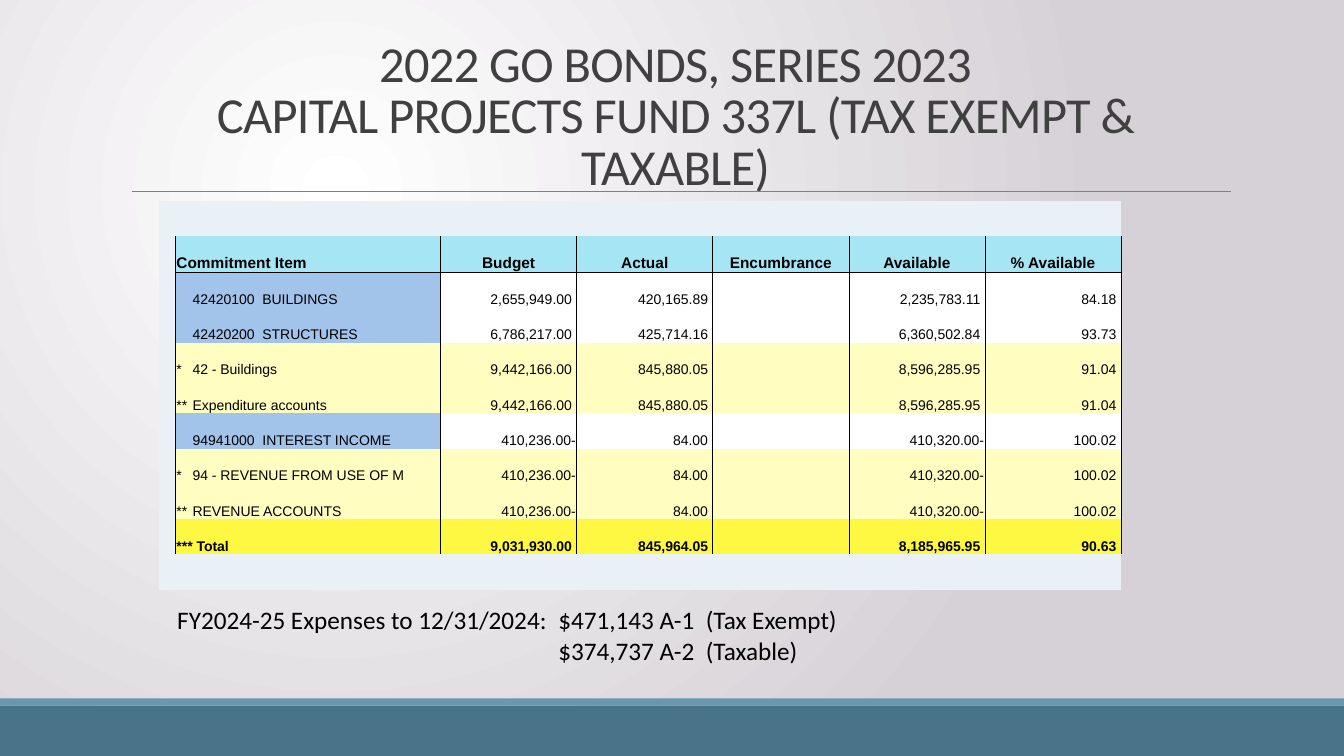
from pptx import Presentation, oxml
from pptx.dml.color import RGBColor
from pptx.enum import shapes, text
from pptx.oxml import ns
from pptx.util import Inches, Pt

BLACK, MARGIN_BLUE, HEADER_BLUE = "000000", "EAF1F6", "A6E5F4"
ITEM_BLUE, WHITE, PALE_YELLOW, YELLOW = "A2C3EA", "FFFFFF", "FFFDBF", "FFF843"
LEVEL_FILLS = {
    "item": (ITEM_BLUE, WHITE),
    "subtotal": (PALE_YELLOW, PALE_YELLOW),
    "total": (YELLOW, YELLOW),
}
HEADINGS = ["Commitment Item", "Budget", "Actual", "Encumbrance", "Available", "% Available"]
ACCOUNTS = [
    ("item", "42420100  BUILDINGS", "2,655,949.00 ", "420,165.89 ", "", "2,235,783.11 ", "84.18 "),
    ("item", "42420200  STRUCTURES", "6,786,217.00 ", "425,714.16 ", "", "6,360,502.84 ", "93.73 "),
    ("subtotal", "*\t42 - Buildings", "9,442,166.00 ", "845,880.05 ", "", "8,596,285.95 ", "91.04 "),
    ("subtotal", "**\tExpenditure accounts", "9,442,166.00 ", "845,880.05 ", "", "8,596,285.95 ", "91.04 "),
    ("item", "94941000  INTEREST INCOME", "410,236.00-", "84.00 ", "", "410,320.00-", "100.02 "),
    ("subtotal", "*\t94 - REVENUE FROM USE OF M", "410,236.00-", "84.00 ", "", "410,320.00-", "100.02 "),
    ("subtotal", "**\tREVENUE ACCOUNTS", "410,236.00-", "84.00 ", "", "410,320.00-", "100.02 "),
    ("total", "*** Total", "9,031,930.00 ", "845,964.05 ", "", "8,185,965.95 ", "90.63 "),
]


def colour(value):
    return RGBColor.from_string(value)


def add_span(para, wording, size, font, ink=BLACK, bold=False):
    span = para.add_run()
    span.text = wording
    span.font.size, span.font.name, span.font.bold = Pt(size), font, bold
    span.font.color.rgb = colour(ink)
    return span


def indent(para, left, first=0):
    properties = para._p.get_or_add_pPr()
    properties.set("marL", str(Inches(left)))
    properties.set("indent", str(Inches(first)))


def add_background(page):
    page.background.fill.solid()
    solid = page._element.find(".//" + ns.qn("p:bgPr"))[0]
    gradient = oxml.parse_xml(
        f'<a:gradFill {ns.nsdecls("a")} rotWithShape="1"><a:gsLst>'
        '<a:gs pos="0"><a:srgbClr val="FFFFFF"/></a:gs>'
        '<a:gs pos="100000"><a:srgbClr val="D6D1D6"/></a:gs></a:gsLst>'
        '<a:path path="circle"><a:fillToRect l="50000" t="50000" r="100000" b="100000"/>'
        '</a:path></a:gradFill>')
    solid.getparent().replace(solid, gradient)


def add_band(page, top, height, fill):
    band = page.shapes.add_shape(
        shapes.MSO_SHAPE.RECTANGLE, 0, Inches(top), Inches(13.33), Inches(height))
    band.shadow.inherit = False
    band.fill.solid()
    band.fill.fore_color.rgb = colour(fill)
    band.line.fill.background()


def add_rule(page, left, right, top):
    rule = page.shapes.add_connector(
        shapes.MSO_CONNECTOR.STRAIGHT, Inches(left), Inches(top), Inches(right), Inches(top))
    rule.line.color.rgb = colour("808080")
    rule.line.width = Pt(0.5)
    rule._element.spPr.append(oxml.parse_xml(f'<a:effectLst {ns.nsdecls("a")}/>'))


def add_title(page, lines):
    title = page.shapes.title
    title.left, title.top, title.width, title.height = map(Inches, (1.2, 0.23, 11, 1.76))
    frame = title.text_frame
    frame.word_wrap = True
    frame.auto_size = text.MSO_AUTO_SIZE.NONE
    frame.vertical_anchor = text.MSO_ANCHOR.BOTTOM
    para = frame.paragraphs[0]
    para.alignment, para.line_spacing = text.PP_ALIGN.CENTER, 0.85
    for number, line in enumerate(lines):
        if number:
            para.add_line_break()
        span = add_span(para, line, 36, "Calibri", "404040")
        span.font._element.set("spc", "-50")


def style_cell(cell, fill, sides=""):
    """Fill a cell and draw black borders on the given sides (L, R, T, B)."""
    cell.margin_left = cell.margin_right = cell.margin_top = Inches(0.01)
    cell.margin_bottom = 0
    cell.vertical_anchor = text.MSO_ANCHOR.BOTTOM
    properties = cell._tc.get_or_add_tcPr()
    for side in "LRTB":
        paint = '<a:solidFill><a:srgbClr val="000000"/></a:solidFill>' if side in sides else "<a:noFill/>"
        properties.append(oxml.parse_xml(
            f'<a:ln{side} {ns.nsdecls("a")} w="6350">{paint}</a:ln{side}>'))
    cell.fill.solid()
    cell.fill.fore_color.rgb = colour(fill)


def write_cell(cell, wording, size, align, bold):
    para = cell.text_frame.paragraphs[0]
    para.alignment = align
    if wording:
        add_span(para, wording, size, "Arial", bold=bold)
    return para


def add_budget_table(page):
    widths = [0.16, 2.63] + [1.35] * 5
    heights = [0.35, 0.36] + [0.35] * 9
    table = page.shapes.add_table(
        len(heights), len(widths), Inches(1.58), Inches(1.99),
        Inches(sum(widths)), Inches(sum(heights))).table
    table.first_row = table.horz_banding = False
    for column, width in zip(table.columns, widths):
        column.width = Inches(width)
    for row, height in zip(table.rows, heights):
        row.height = Inches(height)

    # Pale margin around the figures
    last = len(heights) - 1
    for row in range(len(heights)):
        for column in range(len(widths)):
            if row in (0, last):
                style_cell(table.cell(row, column), MARGIN_BLUE)
            elif column == 0:
                style_cell(table.cell(row, column), MARGIN_BLUE, "R")

    # Headings
    for column, heading in enumerate(HEADINGS, 1):
        cell = table.cell(1, column)
        style_cell(cell, HEADER_BLUE, "LRB")
        align = text.PP_ALIGN.LEFT if column == 1 else text.PP_ALIGN.CENTER
        write_cell(cell, heading, 11, align, True)

    # Accounts
    for row, (level, name, *amounts) in enumerate(ACCOUNTS, 2):
        name_fill, amount_fill = LEVEL_FILLS[level]
        bold = level == "total"
        sides = "LRT" if row == 2 else "LR"
        name_cell = table.cell(row, 1)
        style_cell(name_cell, name_fill, sides)
        para = write_cell(name_cell, name, 10, text.PP_ALIGN.LEFT, bold)
        if level != "total":
            indent(para, 0.16, -0.16 if level == "subtotal" else 0)
        for column, amount in enumerate(amounts, 2):
            cell = table.cell(row, column)
            style_cell(cell, amount_fill, sides)
            write_cell(cell, amount, 10, text.PP_ALIGN.RIGHT, bold)


def add_expenses(page):
    box = page.shapes.add_textbox(Inches(1.66), Inches(5.95), Inches(9.53), Inches(1.01))
    frame = box.text_frame
    frame.word_wrap = True
    first, second = frame.paragraphs[0], frame.add_paragraph()
    add_span(first, "FY2024-25 Expenses to 12/31/2024:\t$471,143 A-1  (Tax Exempt)", 18, "Calibri")
    add_span(second, "$374,737 A-2  (Taxable)", 18, "Calibri")
    indent(first, 3.78, -3.78)
    indent(second, 3.78)


def main():
    deck = Presentation()
    deck.slide_width, deck.slide_height = Inches(13.33), Inches(7.5)
    page = deck.slides.add_slide(deck.slide_layouts[5])
    add_background(page)
    add_band(page, 7, 0.5, "497389")
    add_band(page, 6.93, 0.07, "6997AF")
    add_rule(page, 1.31, 12.21, 1.9)
    add_title(page, ["2022 GO BONDS, SERIES 2023",
                     "CAPITAL PROJECTS FUND 337L (TAX EXEMPT & TAXABLE)"])
    add_budget_table(page)
    add_expenses(page)
    deck.save("out.pptx")


if __name__ == "__main__":
    main()
